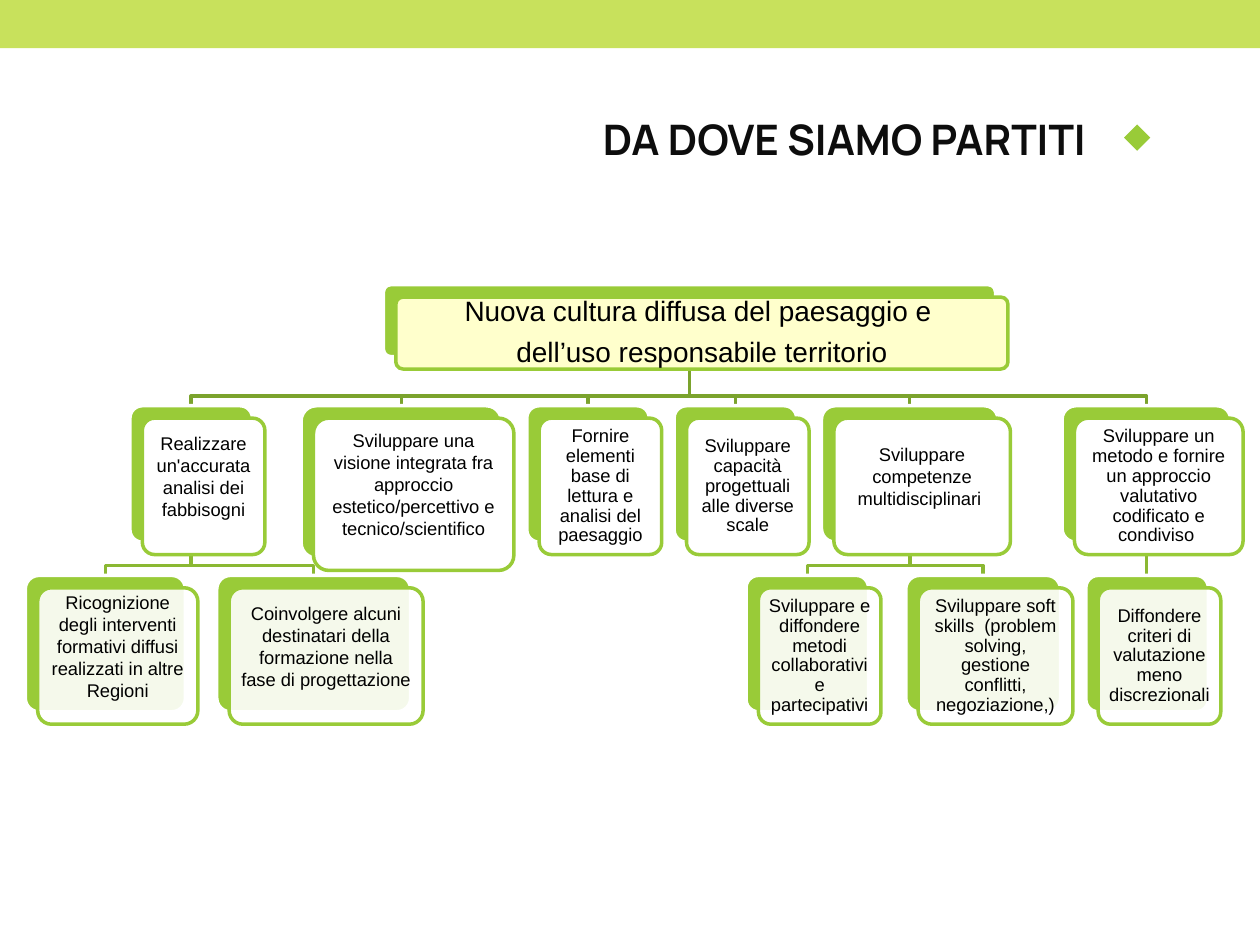
from collections import namedtuple

from lxml import etree
from pptx import Presentation
from pptx.dml.color import RGBColor
from pptx.enum.shapes import MSO_CONNECTOR, MSO_SHAPE
from pptx.enum.text import MSO_ANCHOR, PP_ALIGN
from pptx.oxml.ns import qn
from pptx.util import Cm, Pt

RECT, ROUND, DIAMOND = MSO_SHAPE.RECTANGLE, MSO_SHAPE.ROUNDED_RECTANGLE, MSO_SHAPE.DIAMOND
STRAIGHT = MSO_CONNECTOR.STRAIGHT
MIDDLE = MSO_ANCHOR.MIDDLE
CENTER, RIGHT = PP_ALIGN.CENTER, PP_ALIGN.RIGHT

GREEN, LIME, WHITE, CREAM = "99CB38", "C8E15C", "FFFFFF", "FFFFCC"
LINKS = ["7BA32D", "8BB833"]    # link colour below each level
SHIFT = 0.25                    # offset of the front card, cm
BEND = 0.2                      # height of the bend above a child, cm
SPARE = 0.4                     # extra room under the raised texts, cm

# One card: left and width in cm, its lines, raised text or not, children
Node = namedtuple("Node", "left width lines raised kids height", defaults=(False, (), 2.75))
# One level of the chart: top in cm, fill, opacity, text size, margin in cm
Level = namedtuple("Level", "top fill alpha size pad")

LEVELS = [
    Level(5.74, CREAM, 100, 16, 0.18),
    Level(8.18, WHITE, 100, 10.5, 0.13),
    Level(11.6, WHITE, 90, 10.5, 0.13),
]

TREE = Node(7.73, 12.34, ["Nuova cultura diffusa del paesaggio e ",
                          "dell’uso responsabile territorio"], height=1.45, kids=[
    Node(2.62, 2.47, ["Realizzare un'accurata analisi dei fabbisogni"], True, [
        Node(0.51, 3.23, ["Ricognizione degli interventi formativi diffusi "
                          "realizzati in altre Regioni"], True),
        Node(4.37, 3.91, ["Coinvolgere alcuni destinatari della formazione "
                          "nella fase di progettazione"], True),
    ]),
    Node(6.07, 4.04, ["Sviluppare una visione integrata fra approccio "
                      "estetico/percettivo e tecnico/scientifico"], True, height=3.07),
    Node(10.62, 2.47, ["Fornire elementi base di lettura e analisi del paesaggio"]),
    Node(13.59, 2.47, ["Sviluppare capacità progettuali alle diverse scale"]),
    Node(16.56, 3.56, ["Sviluppare competenze multidisciplinari "], True, [
        Node(15.04, 2.47, ["Sviluppare e diffondere metodi collaborativi e partecipativi "]),
        Node(18.26, 3.12, ["Sviluppare soft skills  (problem solving, "
                           "gestione conflitti, negoziazione,)"]),
    ]),
    Node(21.41, 3.4, ["Sviluppare un metodo e fornire un approccio valutativo "
                      "codificato e condiviso "], kids=[
        Node(21.89, 2.47, ["Diffondere criteri di valutazione meno discrezionali"]),
    ]),
])


def rgb(code):
    return RGBColor.from_string(code)


def draw(slide, kind, box, fill, line=None):
    shape = slide.shapes.add_shape(kind, *map(Cm, box))
    shape.shadow.inherit = False
    shape.fill.solid()
    shape.fill.fore_color.rgb = rgb(fill)
    if line:
        shape.line.color.rgb = rgb(line)
        shape.line.width = Pt(2)
    else:
        shape.line.fill.background()
    return shape


def margin(frame, side, top, low):
    frame.word_wrap = True
    frame.vertical_anchor = MIDDLE
    frame.margin_left = frame.margin_right = Cm(side)
    frame.margin_top, frame.margin_bottom = Cm(top), Cm(low)


def write(para, text, size, font, color, align, bold=False):
    para.alignment = align
    run = para.add_run()
    run.text = text
    run.font.size, run.font.name, run.font.bold = Pt(size), font, bold
    run.font.color.rgb = rgb(color)


def header(slide, left, top, width, height):
    # Band along the top edge
    draw(slide, RECT, (left, top, width, 0.97), LIME)
    # Title with its diamond
    draw(slide, DIAMOND, (left + 22.66, top + 2.51, 0.53, 0.53), GREEN)
    box = slide.shapes.add_textbox(Cm(left + 1.9), Cm(top + 1.3), Cm(20.24), Cm(height - 1.3))
    margin(box.text_frame, 0.25, 0.13, 0.13)
    write(box.text_frame.paragraphs[0], "DA DOVE SIAMO PARTITI", 24, "Manrope",
          "0D0D0D", RIGHT, True)


def link(slide, start, end, color):
    (x, y), (to, low) = start, end
    if abs(x - to) < 0.05:
        line = slide.shapes.add_connector(STRAIGHT, Cm(x), Cm(y), Cm(x), Cm(low))
        etree.SubElement(line._element.spPr, qn("a:effectLst"))
    else:
        bend = low - BEND
        path = slide.shapes.build_freeform(Cm(x), Cm(y))
        path.add_line_segments([(Cm(x), Cm(bend)), (Cm(to), Cm(bend)), (Cm(to), Cm(low))],
                               close=False)
        line = path.convert_to_shape()
        line.shadow.inherit = False
        line.fill.background()
    line.line.color.rgb = rgb(color)
    line.line.width = Pt(2)


def links(slide, node, left, top, depth=0):
    start = left + node.left + node.width / 2, top + LEVELS[depth].top + node.height
    for kid in reversed(node.kids):
        links(slide, kid, left, top, depth + 1)
        end = left + kid.left + kid.width / 2, top + LEVELS[depth + 1].top
        link(slide, start, end, LINKS[depth])


def cards(slide, node, left, top, depth=0):
    level = LEVELS[depth]
    x, y, size = left + node.left, top + level.top, (node.width, node.height)
    # Back plate and front card
    back = draw(slide, ROUND, (x, y, *size), GREEN, WHITE)
    front = draw(slide, ROUND, (x + SHIFT, y + SHIFT, *size), level.fill, GREEN)
    for card in (back, front):
        card.adjustments[0] = 0.1
    if level.alpha < 100:
        tint = front._element.spPr.find(".//" + qn("a:srgbClr"))
        etree.SubElement(tint, qn("a:alpha"), val=str(level.alpha * 1000))
    # Text of the card
    frame = front.text_frame
    margin(frame, level.pad, level.pad, level.pad + SPARE * node.raised)
    for i, text in enumerate(node.lines):
        para = frame.add_paragraph() if i else frame.paragraphs[0]
        para.line_spacing = 1.0 if node.raised else 0.9
        if i < len(node.lines) - 1:
            para.space_after = Pt(6)
        write(para, text, level.size, "Arial", "000000", CENTER)
    for kid in node.kids:
        cards(slide, kid, left, top, depth + 1)


def main():
    deck = Presentation()
    deck.slide_width, deck.slide_height = Cm(25.4), Cm(19.05)
    slide = deck.slides.add_slide(deck.slide_layouts[6])
    header(slide, 0, 0, 25.4, 4.3)
    links(slide, TREE, 0, 0)
    cards(slide, TREE, 0, 0)
    deck.save("out.pptx")


if __name__ == "__main__":
    main()
